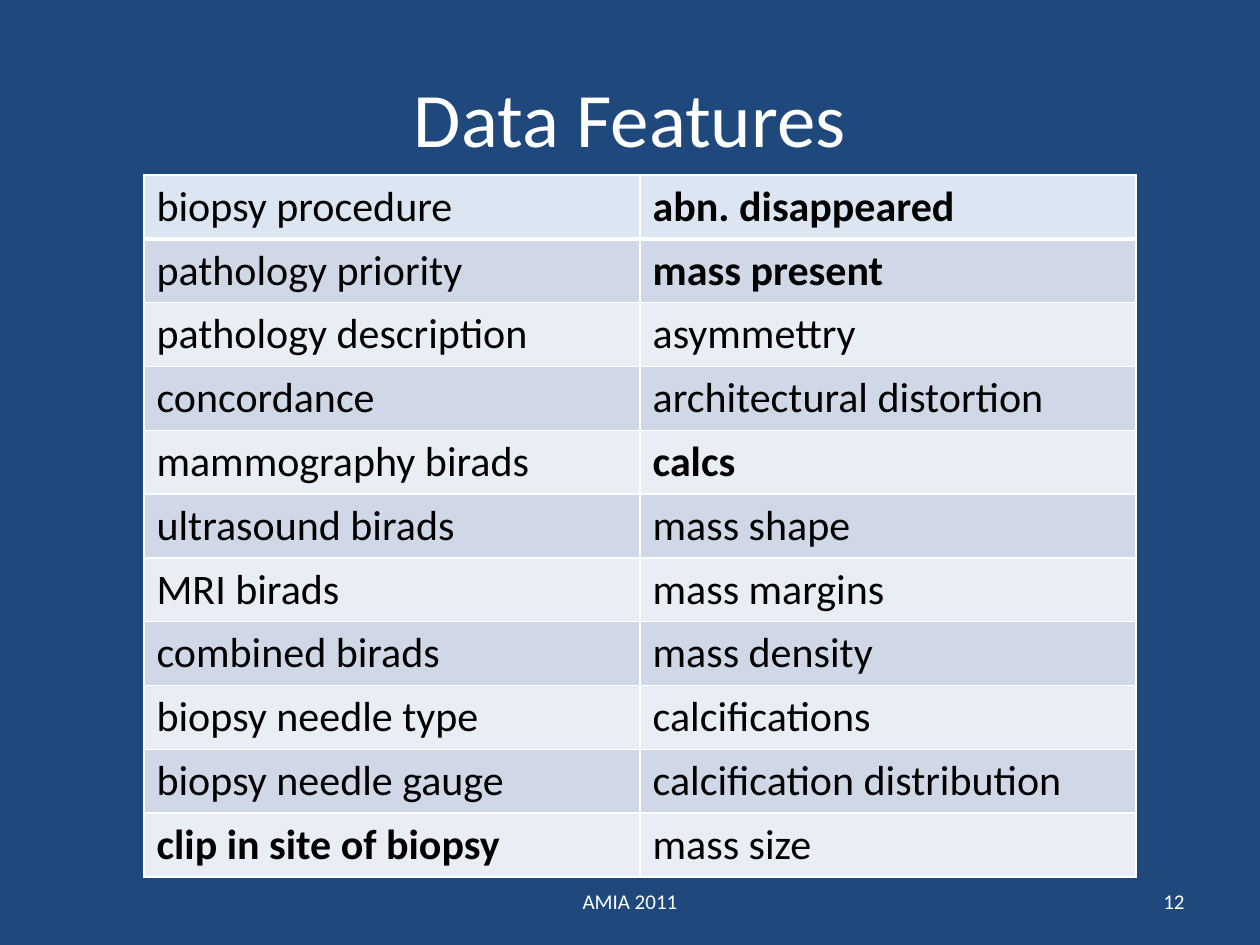
from lxml.etree import SubElement
from pptx import Presentation
from pptx.dml.color import RGBColor as RGB
from pptx.enum.text import MSO_ANCHOR as Anchor, PP_ALIGN as Align
from pptx.oxml.ns import qn
from pptx.util import Pt

# Content
TITLE = "Data Features"
FOOTER = "AMIA 2011"
PAGE_NUMBER = "12"
FEATURES = [
    ("biopsy procedure", "abn. disappeared"),
    ("pathology priority", "mass present"),
    ("pathology description", "asymmettry"),
    ("concordance", "architectural distortion"),
    ("mammography birads", "calcs"),
    ("ultrasound birads", "mass shape"),
    ("MRI birads", "mass margins"),
    ("combined birads", "mass density"),
    ("biopsy needle type", "calcifications"),
    ("biopsy needle gauge", "calcification distribution"),
    ("clip in site of biopsy", "mass size"),
]
KEY_FEATURES = {"abn. disappeared", "mass present", "calcs", "clip in site of biopsy"}

THEME = {
    "font": "Calibri",
    "background": "1F497D", "light": "FFFFFF", "dark": "000000",
    "first_row": "DCE6F2", "bands": ("E9EDF4", "D0D8E8"),
    "title_size": 44, "table_size": 24, "footer_size": 12,
    "border": 1, "first_row_border": 3,
}

# Layout in points: left, top, width, height
SLIDE_SIZE = (720, 540)
TITLE_BOX = (36, 21.6, 648, 90)
NUMBER_BOX = (516, 500.5, 168, 28.75)
FOOTER_BOX = (246, 500.5, 228, 28.75)
TABLE_BOX = (82.3, 100.1, 567, 401)


def write(frame, text, size, color, align, bold=False):
    frame.text = text
    paragraph = frame.paragraphs[0]
    paragraph.alignment = align
    font = paragraph.runs[0].font
    font.name, font.size, font.bold = THEME["font"], Pt(size), bold
    font.color.rgb = RGB.from_string(color)


def add_border(cell, side, width):
    line = SubElement(cell._tc.get_or_add_tcPr(), qn(f"a:ln{side}"), w=str(Pt(width)))
    fill = SubElement(line, qn("a:solidFill"))
    SubElement(fill, qn("a:srgbClr"), val=THEME["light"])


def add_footer_text(slide, text, box, align):
    footer = slide.shapes.add_textbox(*map(Pt, box))
    footer.text_frame.word_wrap = True
    footer.text_frame.vertical_anchor = Anchor.MIDDLE
    write(footer.text_frame, text, THEME["footer_size"], THEME["light"], align)


def add_feature_table(slide):
    rows, columns = len(FEATURES), len(FEATURES[0])
    table = slide.shapes.add_table(rows, columns, *map(Pt, TABLE_BOX)).table
    table.first_row = table.horz_banding = False
    for column in table.columns:
        column.width = Pt(TABLE_BOX[2] / columns)
    for r, features in enumerate(FEATURES):
        table.rows[r].height = Pt(TABLE_BOX[3] / rows)
        band = THEME["bands"][r % 2] if r else THEME["first_row"]
        # The line below the first row is shared with the row under it
        top = THEME["first_row_border" if r == 1 else "border"]
        bottom = THEME["first_row_border" if r == 0 else "border"]
        for c, feature in enumerate(features):
            cell = table.cell(r, c)
            write(cell.text_frame, feature, THEME["table_size"], THEME["dark"],
                  Align.LEFT, feature in KEY_FEATURES)
            for side, width in zip("LRTB", (THEME["border"], THEME["border"], top, bottom)):
                add_border(cell, side, width)
            cell.fill.solid()
            cell.fill.fore_color.rgb = RGB.from_string(band)


def main():
    deck = Presentation()
    deck.slide_width, deck.slide_height = map(Pt, SLIDE_SIZE)
    slide = deck.slides.add_slide(deck.slide_layouts[5])
    slide.background.fill.solid()
    slide.background.fill.fore_color.rgb = RGB.from_string(THEME["background"])

    # Title
    title = slide.shapes.title
    title.left, title.top, title.width, title.height = map(Pt, TITLE_BOX)
    title.text_frame.vertical_anchor = Anchor.MIDDLE
    write(title.text_frame, TITLE, THEME["title_size"], THEME["light"], Align.CENTER)

    # Page number and footer, then the table
    add_footer_text(slide, PAGE_NUMBER, NUMBER_BOX, Align.RIGHT)
    add_footer_text(slide, FOOTER, FOOTER_BOX, Align.CENTER)
    add_feature_table(slide)
    deck.save("out.pptx")


if __name__ == "__main__":
    main()
